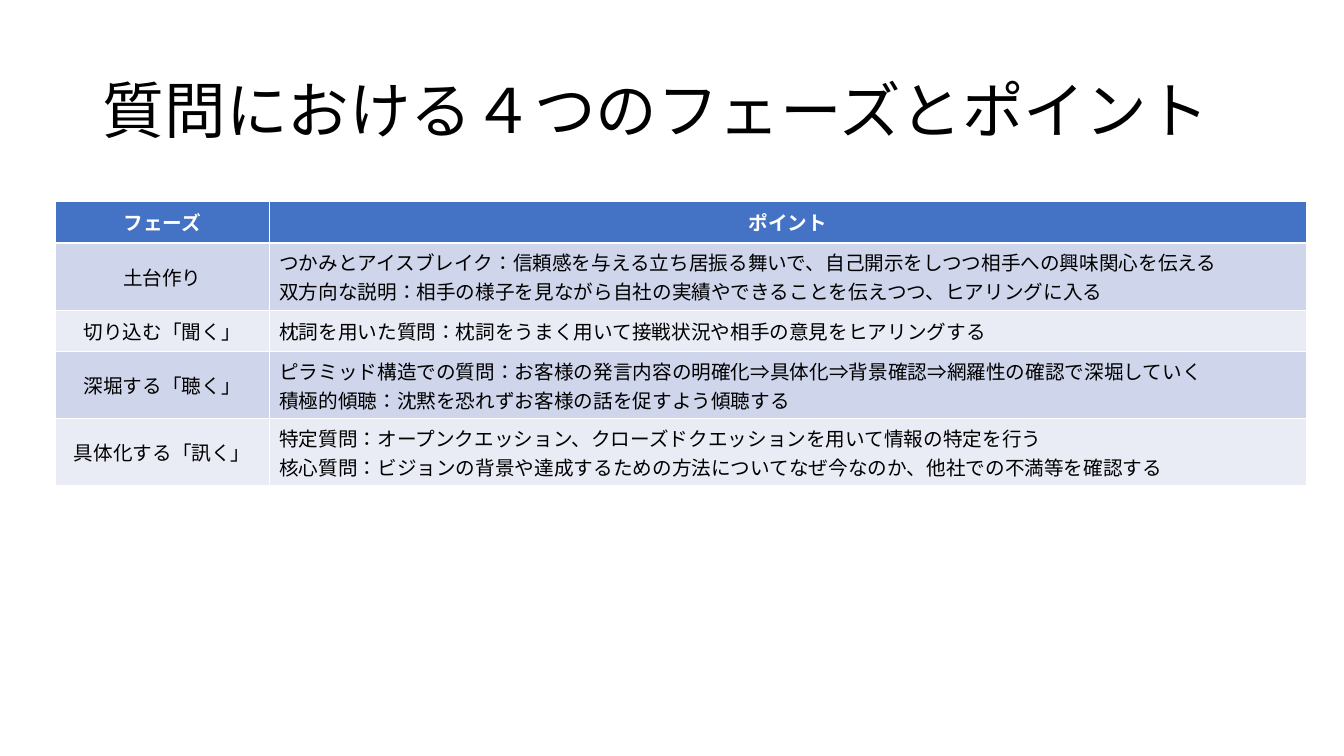
from lxml.etree import SubElement as Sub
from pptx import Presentation
from pptx.dml.color import RGBColor as RGB
from pptx.enum.lang import MSO_LANGUAGE_ID as Lang
from pptx.enum.text import MSO_ANCHOR as Anchor, MSO_AUTO_SIZE as Fit, PP_ALIGN as Align
from pptx.oxml.ns import qn
from pptx.util import Inches, Pt


class Theme:
    font = "Noto Sans CJK JP"
    ink = RGB.from_string("000000")
    white = RGB.from_string("FFFFFF")
    head = RGB.from_string("4472C4")
    bands = [RGB.from_string("CFD5EA"), RGB.from_string("E9EBF5")]
    title = Pt(44)
    body = Pt(14)


def write(frame, text, size=Theme.body, color=Theme.ink, bold=False,
          align=Align.LEFT, space=None):
    """Fill a text frame, one paragraph per line of text."""
    frame.text = text
    for para in frame.paragraphs:
        para.alignment = align
        para.line_spacing = space
        for run in para.runs:
            font = run.font
            font.name, font.size, font.bold = Theme.font, size, bold
            font.color.rgb = color
            font.language_id = Lang.JAPANESE
            Sub(run._r.rPr, qn("a:ea"), typeface=Theme.font)


rows = [
    ("フェーズ", "ポイント"),
    ("土台作り",
     "つかみとアイスブレイク：信頼感を与える立ち居振る舞いで、自己開示をしつつ相手への興味関心を伝える\n"
     "双方向な説明：相手の様子を見ながら自社の実績やできることを伝えつつ、ヒアリングに入る"),
    ("切り込む「聞く」",
     "枕詞を用いた質問：枕詞をうまく用いて接戦状況や相手の意見をヒアリングする"),
    ("深堀する「聴く」",
     "ピラミッド構造での質問：お客様の発言内容の明確化⇒具体化⇒背景確認⇒網羅性の確認で深堀していく\n"
     "積極的傾聴：沈黙を恐れずお客様の話を促すよう傾聴する"),
    ("具体化する「訊く」",
     "特定質問：オープンクエッション、クローズドクエッションを用いて情報の特定を行う\n"
     "核心質問：ビジョンの背景や達成するための方法についてなぜ今なのか、他社での不満等を確認する"),
]
cols = [Inches(2.12), Inches(10.29)]
tall = {1: Inches(0.41), 2: Inches(0.66)}  # row height by number of lines

deck = Presentation()
deck.slide_width, deck.slide_height = Inches(13.33), Inches(7.5)
slide = deck.slides.add_slide(deck.slide_layouts[5])

title = slide.shapes.title
title.left, title.top = Inches(0.92), Inches(0.4)
title.width, title.height = Inches(11.5), Inches(1.45)
write(title.text_frame, "質問における４つのフェーズとポイント", size=Theme.title, space=0.9)
title.text_frame.vertical_anchor = Anchor.MIDDLE
title.text_frame.auto_size = Fit.NONE

high = [tall[point.count("\n") + 1] for _, point in rows]
table = slide.shapes.add_table(len(rows), len(cols), Inches(0.55), Inches(2),
                               sum(cols), sum(high)).table
for col, width in zip(table.columns, cols):
    col.width = width

for r, row in enumerate(rows):
    table.rows[r].height = high[r]
    head = r == 0
    for c, text in enumerate(row):
        cell = table.cell(r, c)
        cell.fill.solid()
        cell.fill.fore_color.rgb = Theme.head if head else Theme.bands[(r - 1) % 2]
        cell.vertical_anchor = Anchor.MIDDLE
        write(cell.text_frame, text, bold=head,
              color=Theme.white if head else Theme.ink,
              align=Align.CENTER if head or c == 0 else Align.LEFT)

deck.save("out.pptx")
